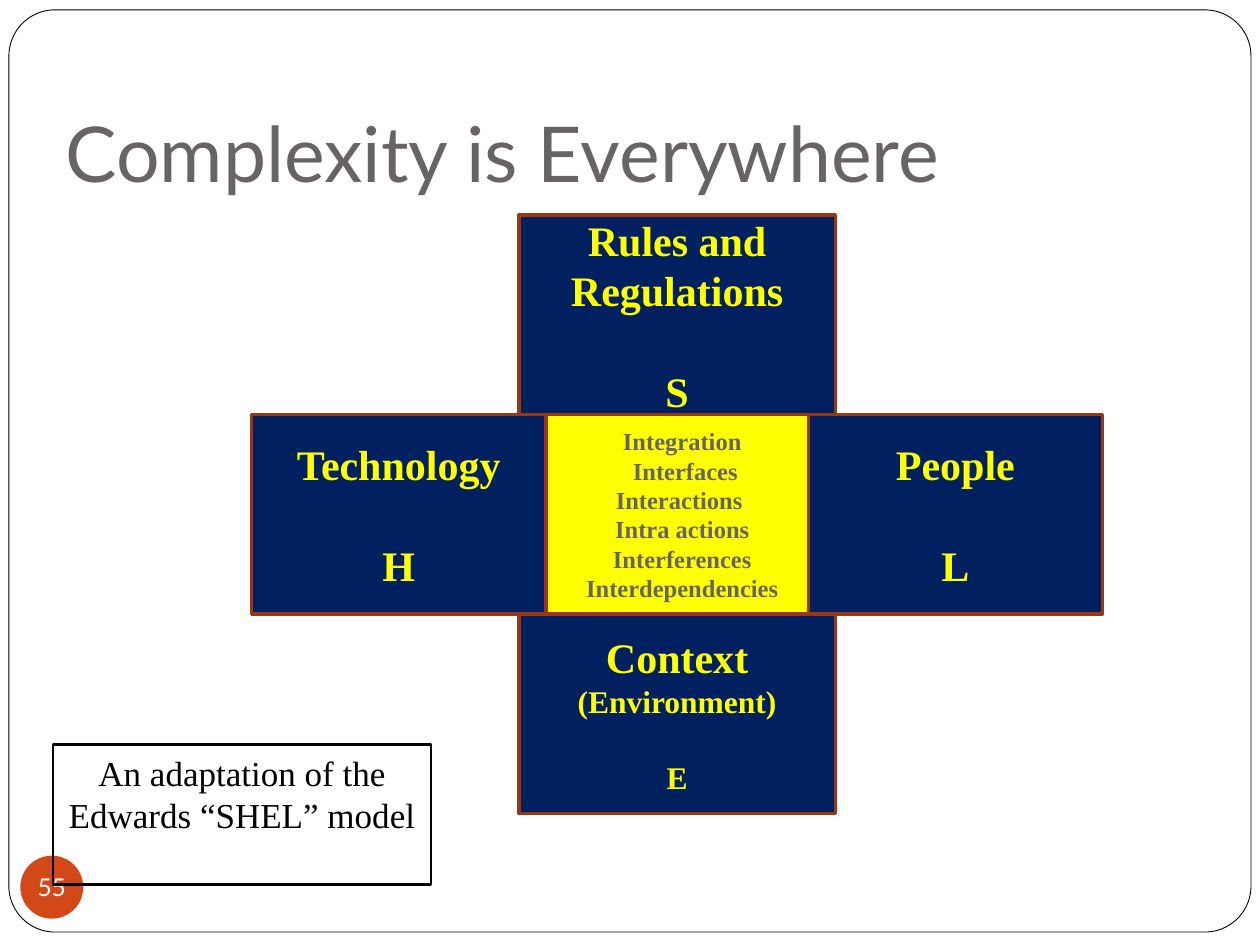
from dataclasses import dataclass

from pptx import Presentation
from pptx.dml.color import RGBColor
from pptx.enum.shapes import MSO_SHAPE
from pptx.enum.text import MSO_ANCHOR, PP_ALIGN
from pptx.util import Cm, Pt

RECTANGLE = MSO_SHAPE.RECTANGLE
ROUNDED = MSO_SHAPE.ROUNDED_RECTANGLE
OVAL = MSO_SHAPE.OVAL
TOP, MIDDLE, BOTTOM = MSO_ANCHOR.TOP, MSO_ANCHOR.MIDDLE, MSO_ANCHOR.BOTTOM
LEFT, CENTER = PP_ALIGN.LEFT, PP_ALIGN.CENTER

COLORS = {
    "white": "FFFFFF",
    "black": "000000",
    "gray": "696464",
    "orange": "D34817",
    "rust": "9C3511",
    "navy": "002060",
    "yellow": "FFFF00",
}
SANS, SERIF = "Lato", "Times New Roman"
LINE_HEIGHT = 1.2

# The cross: three rows of equal height around one vertical axis
AXIS, CROSS_TOP, ROW = 13.65, 4.34, 4.02
POST_WIDTH, ARM_WIDTH, ARM_OFFSET = 6.38, 5.93, 5.61


@dataclass
class Line:
    text: str
    size: float
    gap_before: float = 0


@dataclass
class Style:
    font: str
    color: str
    bold: bool = False
    align: PP_ALIGN = CENTER
    anchor: MSO_ANCHOR = MIDDLE
    margins: tuple = (0.25, 0.13, 0.25, 0.13)


@dataclass
class Box:
    left: float
    top: float
    width: float
    height: float
    fill: str | None = None
    border: str | None = None
    border_width: float = 2
    kind: MSO_SHAPE = RECTANGLE


def rgb(name: str) -> RGBColor:
    return RGBColor.from_string(COLORS[name])


def draw_box(slide, box: Box):
    shape = slide.shapes.add_shape(
        box.kind, Cm(box.left), Cm(box.top), Cm(box.width), Cm(box.height))
    shape.shadow.inherit = False
    if box.fill:
        shape.fill.solid()
        shape.fill.fore_color.rgb = rgb(box.fill)
    else:
        shape.fill.background()
    if box.border:
        shape.line.color.rgb = rgb(box.border)
        shape.line.width = Pt(box.border_width)
    else:
        shape.line.fill.background()
    return shape


def write_lines(shape, lines: list[Line], style: Style) -> None:
    frame = shape.text_frame
    left, top, right, bottom = (Cm(margin) for margin in style.margins)
    frame_format = {
        "word_wrap": True, "vertical_anchor": style.anchor,
        "margin_left": left, "margin_top": top,
        "margin_right": right, "margin_bottom": bottom,
    }
    for name, value in frame_format.items():
        setattr(frame, name, value)
    for index, line in enumerate(lines):
        paragraph = frame.add_paragraph() if index else frame.paragraphs[0]
        paragraph.alignment = style.align
        paragraph.space_before = Pt(line.gap_before)
        run = paragraph.add_run()
        run.text = line.text
        font_format = {"name": style.font, "size": Pt(line.size), "bold": style.bold}
        for name, value in font_format.items():
            setattr(run.font, name, value)
        run.font.color.rgb = rgb(style.color)


def factor_lines(label: str, letter: str, detail: str = "") -> list[Line]:
    """Label, optional smaller detail, then the SHEL letter one line further down."""
    lines = [Line(label, 24)]
    if detail:
        lines.append(Line(detail, 18))
    size = lines[-1].size
    return lines + [Line(letter, size, round(size * LINE_HEIGHT, 1))]


def draw_cross(slide) -> None:
    core_style = Style(SERIF, "gray", bold=True)
    factor_style = Style(SERIF, "yellow", bold=True)
    middle = CROSS_TOP + ROW
    post_left = AXIS - POST_WIDTH / 2
    arm_left = AXIS - ARM_OFFSET - ARM_WIDTH / 2

    core = draw_box(slide, Box(11, middle, 5.51, ROW, "yellow", "rust"))
    core_words = ["Integration", " Interfaces", "Interactions ",
                  "Intra actions Interferences", "Interdependencies"]
    write_lines(core, [Line(word, 14) for word in core_words], core_style)

    factors = [
        (post_left, CROSS_TOP, POST_WIDTH, factor_lines("Rules and Regulations", "S")),
        (arm_left, middle, ARM_WIDTH, factor_lines("Technology", "H")),
        (arm_left + 2 * ARM_OFFSET, middle, ARM_WIDTH, factor_lines("People", "L")),
        (post_left, middle + ROW, POST_WIDTH,
         factor_lines("Context", "E", "(Environment)")),
    ]
    for left, top, width, lines in factors:
        factor = draw_box(slide, Box(left, top, width, ROW, "navy", "rust"))
        write_lines(factor, lines, factor_style)


def main() -> None:
    deck = Presentation()
    deck.slide_width, deck.slide_height = Cm(25.4), Cm(19.05)
    slide = deck.slides.add_slide(deck.slide_layouts[6])

    frame = draw_box(slide, Box(0.18, 0.2, 25.04, 18.59, "white", "black", 0.5, ROUNDED))
    frame.adjustments[0] = 0.05

    title = slide.shapes.add_textbox(Cm(1.07), Cm(1.07), Cm(22.86), Cm(3.18))
    write_lines(title, [Line("Complexity is Everywhere", 44)],
                Style(SANS, "gray", align=LEFT, anchor=BOTTOM,
                      margins=(0.25, 0.13, 0.25, 0.25)))

    page_badge = draw_box(slide, Box(0.41, 17.25, 1.27, 1.27, "orange", kind=OVAL))
    write_lines(page_badge, [Line("55", 14)],
                Style(SANS, "white", margins=(0, 0, 0, 0)))

    draw_cross(slide)

    credit = draw_box(slide, Box(1.07, 15.01, 7.62, 2.82, border="black", border_width=1.5))
    write_lines(credit, [Line("An adaptation of the Edwards “SHEL” model", 20)],
                Style(SERIF, "black", anchor=TOP))

    deck.save("out.pptx")


if __name__ == "__main__":
    main()
